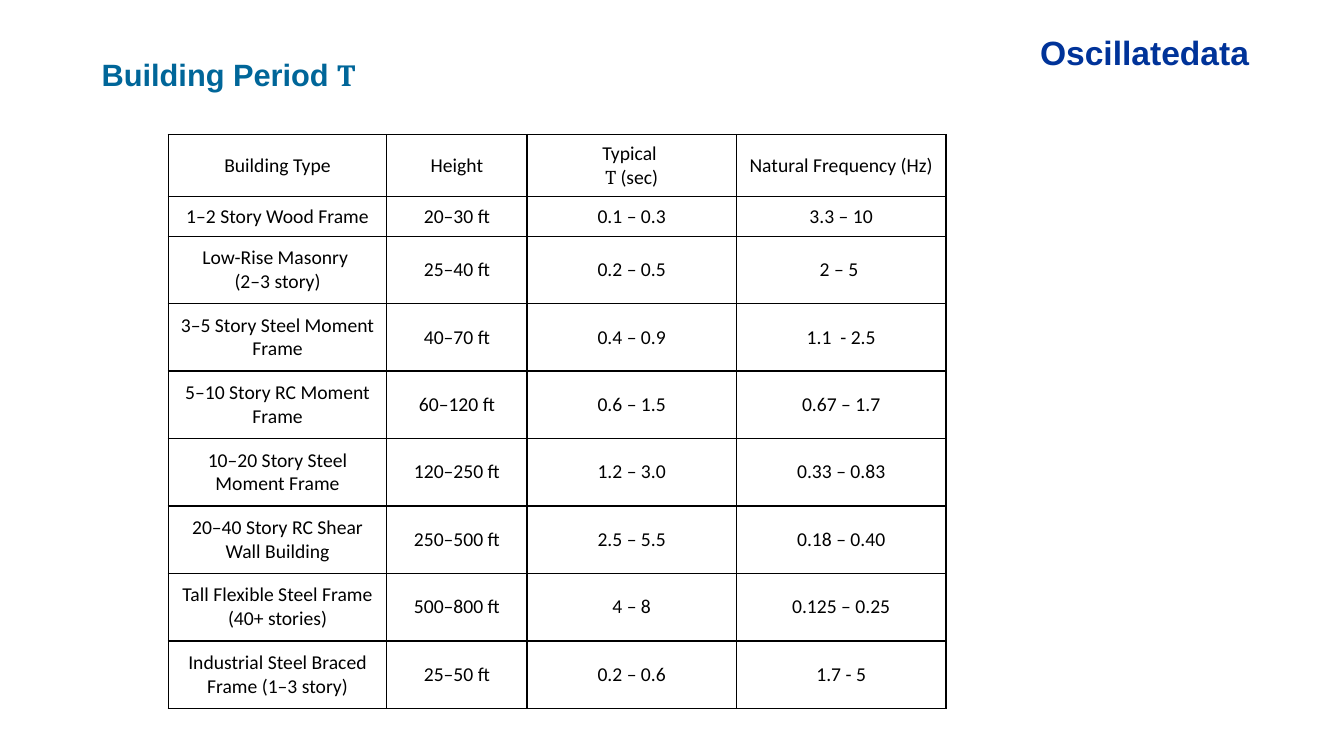
from dataclasses import astuple, dataclass

from lxml.etree import SubElement
from pptx import Presentation
from pptx.dml.color import RGBColor
from pptx.enum.text import MSO_ANCHOR, MSO_AUTO_SIZE, PP_ALIGN
from pptx.oxml.ns import qn
from pptx.util import Cm, Pt

BLACK = RGBColor(0x00, 0x00, 0x00)
NAVY = RGBColor(0x00, 0x33, 0x99)
TEAL = RGBColor(0x00, 0x66, 0x99)

SYMBOL_FONT = "Cambria"
COLUMN_WIDTHS = [5.51, 3.53, 5.28, 5.28]
HEADING_HEIGHT, SINGLE_HEIGHT, DOUBLE_HEIGHT = 1.57, 0.99, 1.7
PERIOD_COLUMN = 2


@dataclass
class Building:
    kind: str
    height: str
    period: str
    frequency: str
    row_height: float = DOUBLE_HEIGHT


BUILDINGS = [
    Building("Building Type", "Height", "Typical \n", "Natural Frequency (Hz)", HEADING_HEIGHT),
    Building("1–2 Story Wood Frame", "20–30 ft", "0.1 – 0.3", "3.3 – 10", SINGLE_HEIGHT),
    Building("Low-Rise Masonry \n(2–3 story)", "25–40 ft", "0.2 – 0.5", "2 – 5 "),
    Building("3–5 Story Steel Moment Frame", "40–70 ft", "0.4 – 0.9", "1.1  - 2.5"),
    Building("5–10 Story RC Moment Frame", "60–120 ft", "0.6 – 1.5", "0.67 – 1.7"),
    Building("10–20 Story Steel Moment Frame", "120–250 ft", "1.2 – 3.0", "0.33 – 0.83"),
    Building("20–40 Story RC Shear Wall Building", "250–500 ft", "2.5 – 5.5", "0.18 – 0.40"),
    Building("Tall Flexible Steel Frame (40+ stories)", "500–800 ft", "4 – 8", "0.125 – 0.25"),
    Building("Industrial Steel Braced Frame (1–3 story)", "25–50 ft", "0.2 – 0.6", "1.7 - 5"),
]


def set_font(paragraph, name: str, size: float, color: RGBColor, bold: bool) -> None:
    font = paragraph.font
    font.name, font.size, font.bold = name, Pt(size), bold
    font.color.rgb = color


def add_symbol(paragraph, symbol: str) -> None:
    run = paragraph.add_run()
    run.text = symbol
    run.font.name = SYMBOL_FONT


def write_heading(shape, text: str, size: float, color: RGBColor):
    frame = shape.text_frame
    frame.word_wrap = False
    frame.auto_size = MSO_AUTO_SIZE.SHAPE_TO_FIT_TEXT
    frame.vertical_anchor = MSO_ANCHOR.TOP
    paragraph = frame.paragraphs[0]
    paragraph.text = text
    paragraph.alignment = PP_ALIGN.LEFT
    set_font(paragraph, "Arial", size, color, True)
    return paragraph


def add_borders(cell) -> None:
    properties = cell._tc.get_or_add_tcPr()
    for side in ("a:lnL", "a:lnR", "a:lnT", "a:lnB"):
        line = SubElement(properties, qn(side), w=str(Pt(1)))
        fill = SubElement(line, qn("a:solidFill"))
        SubElement(fill, qn("a:srgbClr"), val=str(BLACK))


def write_cell(cell, text: str) -> None:
    add_borders(cell)
    cell.fill.background()
    cell.vertical_anchor = MSO_ANCHOR.MIDDLE
    paragraph = cell.text_frame.paragraphs[0]
    paragraph.text = text
    paragraph.alignment = PP_ALIGN.CENTER
    set_font(paragraph, "Calibri", 14, BLACK, False)


def add_building_table(slide, buildings: list[Building]):
    total_height = sum(building.row_height for building in buildings)
    frame = slide.shapes.add_table(
        len(buildings), len(COLUMN_WIDTHS),
        Cm(4.24), Cm(3.39), Cm(sum(COLUMN_WIDTHS)), Cm(total_height))
    table = frame.table
    table.first_row = table.horz_banding = False
    for column, width in zip(table.columns, COLUMN_WIDTHS):
        column.width = Cm(width)
    for row, building in zip(table.rows, buildings):
        *texts, row_height = astuple(building)
        row.height = Cm(row_height)
        for cell, text in zip(row.cells, texts):
            write_cell(cell, text)
    return table


def main() -> None:
    presentation = Presentation()
    presentation.slide_width, presentation.slide_height = Cm(33.87), Cm(19.05)
    slide = presentation.slides.add_slide(presentation.slide_layouts[5])

    # Site name
    site_name = slide.shapes.add_textbox(Cm(25.96), Cm(0.69), Cm(5.97), Cm(1.27))
    write_heading(site_name, "Oscillatedata", 24, NAVY)

    # Title
    title = slide.shapes.title
    title.left, title.top, title.width, title.height = Cm(2.31), Cm(1.27), Cm(7.01), Cm(1.19)
    add_symbol(write_heading(title, "Building Period ", 22, TEAL), "T")

    # Table of building periods
    table = add_building_table(slide, BUILDINGS)
    period_heading = table.cell(0, PERIOD_COLUMN).text_frame.paragraphs[0]
    add_symbol(period_heading, "T ")
    period_heading.add_run().text = "(sec)"

    presentation.save("out.pptx")


if __name__ == "__main__":
    main()
